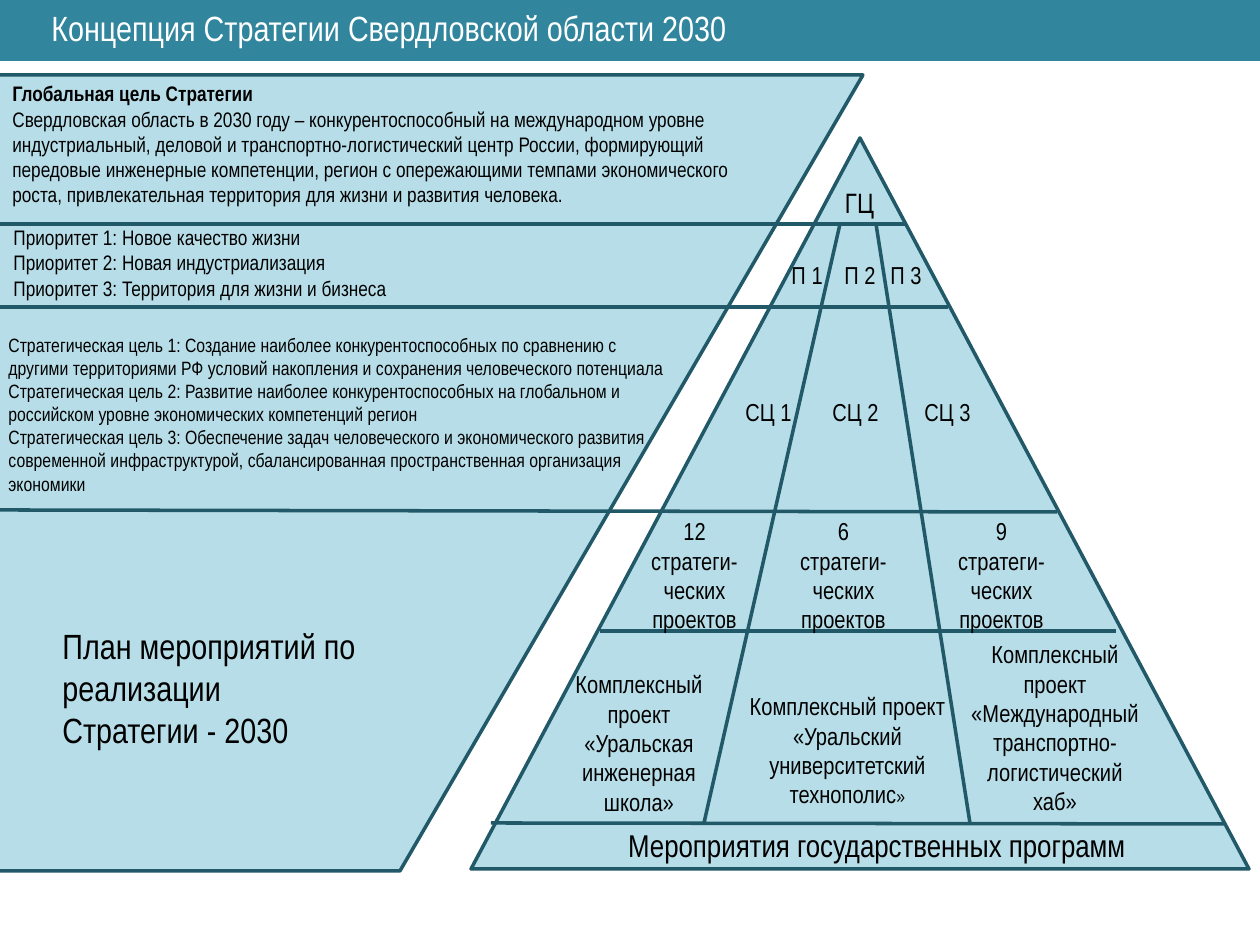
"""Builds the slide on the concept of the Sverdlovsk region strategy 2030."""
import pptx
import pptx.dml.color
import pptx.enum.shapes
import pptx.enum.text
import pptx.oxml.ns
import pptx.util
from lxml import etree

PX = 914400 / 126
FONT = "Arial Narrow"
BLACK = pptx.dml.color.RGBColor(0x00, 0x00, 0x00)
WHITE = pptx.dml.color.RGBColor(0xFF, 0xFF, 0xFF)
LIGHT = pptx.dml.color.RGBColor(0xB7, 0xDE, 0xE8)
DARK = pptx.dml.color.RGBColor(0x21, 0x59, 0x68)
TEAL = pptx.dml.color.RGBColor(0x31, 0x85, 0x9C)
LEFT = pptx.enum.text.PP_ALIGN.LEFT
CENTER = pptx.enum.text.PP_ALIGN.CENTER
TOP = pptx.enum.text.MSO_ANCHOR.TOP
MIDDLE = pptx.enum.text.MSO_ANCHOR.MIDDLE
SHAPE = pptx.enum.shapes.MSO_SHAPE


def emu(*values):
    return [pptx.util.Emu(round(v * PX)) for v in values]


def add_text(box, paragraphs, size, align=LEFT, anchor=TOP, color=BLACK, wrap=True):
    tf = s.shapes.add_textbox(*emu(*box)).text_frame
    tf.word_wrap = wrap
    tf.vertical_anchor = anchor
    for i, runs in enumerate(paragraphs):
        p = tf.paragraphs[0] if i == 0 else tf.add_paragraph()
        p.alignment = align
        for text in [runs] if isinstance(runs, str) else runs:
            r = p.add_run()
            r.text = text
            r.font.name = FONT
            r.font.size = pptx.util.Pt(size)
            r.font.color.rgb = color
    return tf


prs = pptx.Presentation()
prs.slide_width, prs.slide_height = emu(1260, 945)
s = prs.slides.add_slide(prs.slide_layouts[6])

fb = s.shapes.build_freeform(-4, 75, scale=PX)
fb.add_line_segments([(863, 75), (400, 871), (-4, 871)], close=True)
panel = fb.convert_to_shape()
pyramid = s.shapes.add_shape(SHAPE.ISOSCELES_TRIANGLE, *emu(471, 138, 778, 731))
for sp in (panel, pyramid):
    sp.shadow.inherit = False
    sp.fill.solid()
    sp.fill.fore_color.rgb = LIGHT
    sp.line.color.rgb = DARK
    sp.line.width = pptx.util.Pt(2)

for ends in [
    (0, 224, 907, 224),
    (0, 307, 948, 307),
    (0, 510, 1057, 512),
    (600, 631, 1116, 631),
    (491, 823, 1225, 824),
    (840, 224, 704, 823),
    (876, 224, 970, 823),
]:
    cn = s.shapes.add_connector(pptx.enum.shapes.MSO_CONNECTOR.STRAIGHT, *emu(*ends))
    cn.line.color.rgb = DARK
    cn.line.width = pptx.util.Pt(2)
    etree.SubElement(cn._element.spPr, pptx.oxml.ns.qn("a:effectLst"))

add_text((827, 179, 65, 47), ["ГЦ"], 16, CENTER)
for n, (x_priority, x_goal, x_count, count) in enumerate(
    [(779, 733, 610, 12), (832, 820, 759, 6), (878, 912, 917, 9)], 1
):
    add_text((x_priority, 254, 69, 43), [f"П {n}"], 14)
    add_text((x_goal, 391, 79, 43), [f"СЦ {n}"], 14)
    add_text((x_count, 510, 169, 131), [str(count), "стратеги-", "ческих проектов"], 14, CENTER)

add_text((520, 663, 238, 161),
         ["Комплексный", "проект", "«Уральская инженерная", "школа»"], 14, CENTER)
tf = add_text((726, 685, 243, 131),
              [["Комплексный проект «Уральский университетский технополис", "»"]], 14, CENTER)
tf.paragraphs[0].runs[1].font.size = pptx.util.Pt(11)
add_text((936, 633, 238, 190),
         ["Комплексный", "проект", "«Международный транспортно-логистический", "хаб»"], 14, CENTER)

tf = add_text((0, 76, 780, 136), [
    "Глобальная цель Стратегии",
    "Свердловская область в 2030 году – конкурентоспособный на международном уровне "
    "индустриальный, деловой и транспортно-логистический центр России, формирующий "
    "передовые инженерные компетенции, регион с опережающими темпами экономического "
    "роста, привлекательная территория для жизни и развития человека.",
], 12, anchor=MIDDLE)
tf.paragraphs[0].runs[0].font.bold = True
add_text((1, 221, 727, 83), [
    "Приоритет 1: Новое качество жизни",
    "Приоритет 2: Новая индустриализация",
    "Приоритет 3: Территория для жизни и бизнеса",
], 12, anchor=MIDDLE)
add_text((-4, 320, 684, 188), [
    "Стратегическая цель 1: Создание наиболее конкурентоспособных по сравнению с "
    "другими территориями РФ условий накопления и сохранения человеческого потенциала",
    "Стратегическая цель 2: Развитие наиболее конкурентоспособных на глобальном и "
    "российском уровне экономических компетенций регион",
    "Стратегическая цель 3: Обеспечение задач человеческого и экономического развития "
    "современной инфраструктурой, сбалансированная пространственная организация экономики",
], 11, anchor=MIDDLE)
add_text((50, 581, 336, 213), ["План мероприятий по реализации", "Стратегии - 2030"],
         20, anchor=MIDDLE)

header = s.shapes.add_shape(SHAPE.RECTANGLE, *emu(0, -4, 1260, 65))
header.shadow.inherit = False
header.fill.solid()
header.fill.fore_color.rgb = TEAL
header.line.fill.background()
add_text((39, 0, 953, 55), ["Концепция Стратегии Свердловской области 2030"], 20, color=WHITE)
add_text((612, 820, 530, 50), ["Мероприятия государственных программ"], 18, CENTER, wrap=False)

prs.save("out.pptx")
